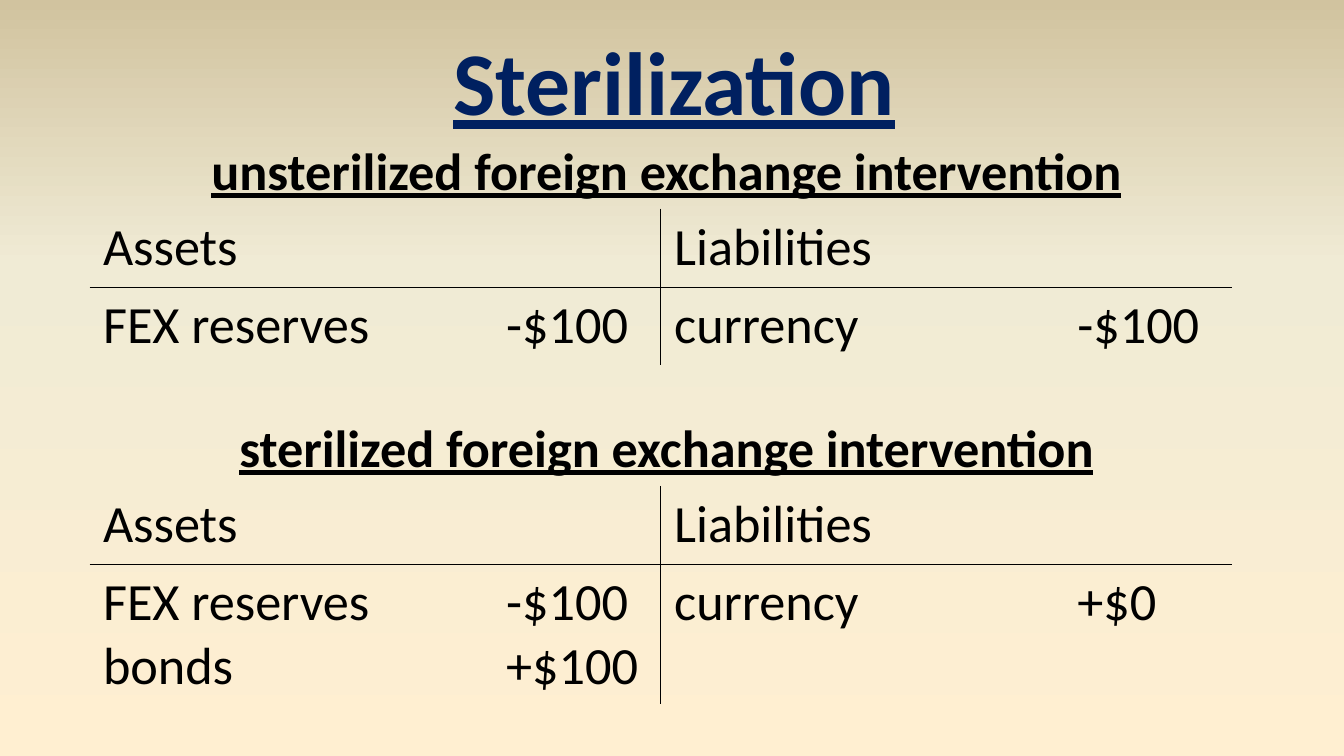
from pptx import Presentation
from pptx.dml.color import RGBColor
from pptx.enum.text import MSO_AUTO_SIZE as AutoSize, PP_ALIGN as Align
from pptx.oxml import parse_xml
from pptx.oxml.ns import nsdecls, qn
from pptx.util import Pt

PX = 9525  # 96 px to the inch
BLACK = RGBColor(0, 0, 0)
NAVY = RGBColor(0x00, 0x20, 0x60)
CREAM = RGBColor(0xFF, 0xEF, 0xD1)
SAND = RGBColor(0xF0, 0xEB, 0xD5)
TAN = RGBColor(0xD1, 0xC3, 0x9F)
NO_STYLE = "{2D5ABB26-0587-4C30-8999-92F81FD0307C}"

LEFT, COLUMN, ROW, EXTRA_LINE = 64, 408, 56, 44
AMOUNT_TAB = 288

ACCOUNTS = [
    ("unsterilized foreign exchange intervention", 94,
     ["FEX reserves\t-$100"], ["currency\t-$100"]),
    ("sterilized foreign exchange intervention", 292,
     ["FEX reserves\t-$100", "bonds\t+$100"], ["currency\t+$0"]),
]


def add_heading(text, left, top, width, height, size, color, wrap=True):
    frame = slide.shapes.add_textbox(
        left * PX, top * PX, width * PX, height * PX).text_frame
    frame.word_wrap = wrap
    frame.auto_size = AutoSize.SHAPE_TO_FIT_TEXT
    frame.text = text
    line = frame.paragraphs[0]
    line.alignment = Align.CENTER
    font = line.runs[0].font
    font.name, font.size, font.color.rgb = "Calibri", Pt(size), color
    font.bold = font.underline = True


def fill_cell(cell, lines, borders):
    """Write the lines with a tab stop for amounts, and rule the given sides."""
    cell.text = "\n".join(lines)
    for line in cell.text_frame.paragraphs:
        line._p.get_or_add_pPr().append(parse_xml(
            f'<a:tabLst {nsdecls("a")}><a:tab pos="{AMOUNT_TAB * PX}" algn="l"/></a:tabLst>'))
        for run in line.runs:
            font = run.font
            font.name, font.size, font.color.rgb = "Calibri", Pt(28), BLACK
    properties = cell._tc.get_or_add_tcPr()
    for side in "LRTB":
        paint = (f'<a:solidFill><a:srgbClr val="{BLACK}"/></a:solidFill>'
                 if side in borders else "<a:noFill/>")
        properties.append(parse_xml(
            f'<a:ln{side} {nsdecls("a")} w="{Pt(0.5)}">{paint}</a:ln{side}>'))
    cell.fill.background()


prs = Presentation()
prs.slide_width, prs.slide_height = 960 * PX, 540 * PX
slide = prs.slides.add_slide(prs.slide_layouts[6])

backdrop = slide.background.fill
backdrop.gradient()
backdrop.gradient_angle = 90
for stop, color in zip(backdrop.gradient_stops, (CREAM, TAN)):
    stop.color.rgb = color
stop_list = slide.element.find(".//" + qn("a:gsLst"))
stop_list.insert(1, parse_xml(
    f'<a:gs {nsdecls("a")} pos="65000"><a:srgbClr val="{SAND}"/></a:gs>'))

add_heading("Sterilization", 312, 14, 339, 87, 48, NAVY, wrap=False)

for heading, top, assets, liabilities in ACCOUNTS:
    add_heading(heading, LEFT, top, 824, 55, 28, BLACK)
    entry_height = ROW + EXTRA_LINE * (len(assets) - 1)
    account = slide.shapes.add_table(
        2, 2, LEFT * PX, (top + 55) * PX, 2 * COLUMN * PX,
        (ROW + entry_height) * PX).table
    account.first_row = account.horz_banding = False
    account._tbl.tblPr.find(qn("a:tableStyleId")).text = NO_STYLE
    account.rows[0].height = ROW * PX
    account.rows[1].height = entry_height * PX
    fill_cell(account.cell(0, 0), ["Assets"], "RB")
    fill_cell(account.cell(0, 1), ["Liabilities"], "LB")
    fill_cell(account.cell(1, 0), assets, "RT")
    fill_cell(account.cell(1, 1), liabilities, "LT")

prs.save("out.pptx")
